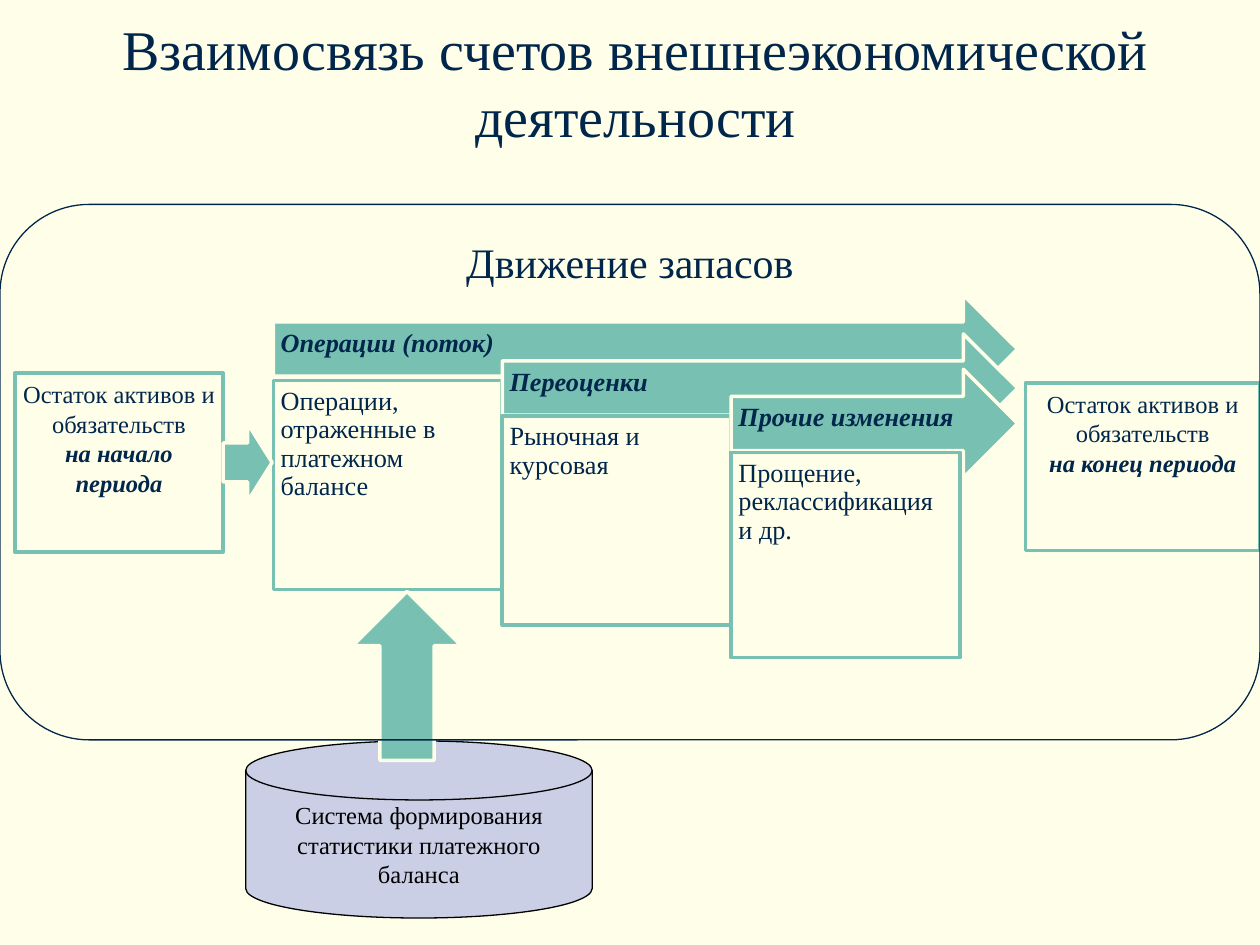
from lxml import etree
from pptx import Presentation
from pptx.dml.color import RGBColor
from pptx.enum.shapes import MSO_SHAPE as SHAPE
from pptx.enum.text import MSO_ANCHOR as ANCHOR, MSO_AUTO_SIZE as AUTO, PP_ALIGN as ALIGN
from pptx.oxml import parse_xml
from pptx.util import Pt

CREAM = RGBColor(0xFF, 0xFF, 0xE9)
TEAL = RGBColor(0x78, 0xC0, 0xB2)
NAVY = RGBColor(0x00, 0x26, 0x4C)
LILAC = RGBColor(0xCA, 0xCF, 0xE5)
BLACK = RGBColor(0, 0, 0)
FACE = "Times New Roman"
NS = "http://schemas.openxmlformats.org/drawingml/2006/main"

PLAIN = {"bold": False, "italic": False}
STRONG = {"bold": True, "italic": True}

# heading, body text, arrow top, body top, body height
STAGES = [
    ("Операции (поток)", "Операции, отраженные в платежном балансе", 168.5, 217.4, 119.5),
    ("Переоценки", "Рыночная и курсовая", 190.8, 237.6, 119.5),
    ("Прочие изменения", "Прощение, реклассификация и др.", 211, 258.5, 117.4),
]


def put(target, values):
    for name, value in values.items():
        setattr(target, name, value)


def draw(slide, kind, box, fill, line, width):
    shape = slide.shapes.add_shape(kind, *map(Pt, box))
    shape.shadow.inherit = False
    if fill is None:
        shape.fill.background()
    else:
        shape.fill.solid()
        shape.fill.fore_color.rgb = fill
    shape.line.color.rgb = line
    shape.line.width = Pt(width)
    return shape


def write(shape, rows, size, color=NAVY, align=ALIGN.CENTER, anchor=ANCHOR.TOP,
          pads=(3.6, 3.6, 3.6, 3.6), lead=1.0, wrap=True):
    """Fill a shape with rows of (text, font style); pads run left, top, right, bottom."""
    frame = shape.text_frame
    sides = ("margin_left", "margin_top", "margin_right", "margin_bottom")
    put(frame, dict(zip(sides, map(Pt, pads))))
    put(frame, {"auto_size": AUTO.NONE, "word_wrap": wrap, "vertical_anchor": anchor})
    for i, (text, style) in enumerate(rows):
        para = frame.add_paragraph() if i else frame.paragraphs[0]
        put(para, {"alignment": align, "line_spacing": lead})
        run = para.add_run()
        run.text = text
        put(run.font, {"name": FACE, "size": Pt(size), **style})
        run.font.color.rgb = color


def add_title(slide, box, text):
    title = slide.shapes.title
    put(title, dict(zip(("left", "top", "width", "height"), map(Pt, box))))
    write(title, [(text, PLAIN)], 32, anchor=ANCHOR.BOTTOM, pads=(7.2, 3.6, 7.2, 3.6))
    props = title.text_frame.paragraphs[0].runs[0].font.fill._xPr
    glow = parse_xml(
        f'<a:effectLst xmlns:a="{NS}"><a:outerShdw blurRad="38100" dist="38100" dir="2700000">'
        '<a:srgbClr val="000000"><a:alpha val="43000"/></a:srgbClr>'
        '</a:outerShdw></a:effectLst>')
    props.find(f"{{{NS}}}solidFill").addnext(glow)


def add_stages(slide, left, right, step):
    """Overlapping arrows that share a right end, each with its body below."""
    for i, (head, text, top, low, height) in enumerate(STAGES):
        x = left + i * step
        arrow = draw(slide, SHAPE.RIGHT_ARROW, (x, top, right - x, 62), TEAL, CREAM, 2)
        write(arrow, [(head, STRONG)], 15, align=ALIGN.LEFT, anchor=ANCHOR.MIDDLE,
              pads=(4.2, 4.2, 16, 10), lead=0.9)
        body = draw(slide, SHAPE.RECTANGLE, (x, low, step, height), CREAM, TEAL, 2)
        write(body, [(text, PLAIN)], 15, align=ALIGN.LEFT,
              pads=(4.2, 4.2, 4.2, 4.2), lead=0.9)


def add_stock(slide, box, moment):
    stock = draw(slide, SHAPE.RECTANGLE, box, CREAM, TEAL, 2)
    write(stock, [("Остаток активов и", PLAIN), ("обязательств", PLAIN), (moment, STRONG)], 14)


def add_source(slide, box):
    disk = draw(slide, SHAPE.FLOWCHART_MAGNETIC_DISK, box, LILAC, BLACK, 0.75)
    write(disk, [("Система формирования статистики платежного баланса", PLAIN)], 14,
          color=BLACK, anchor=ANCHOR.MIDDLE, pads=(7.2, 0, 7.2, 0))


def add_frame(slide, box):
    frame = draw(slide, SHAPE.ROUNDED_RECTANGLE, box, None, NAVY, 0.75)
    write(frame, [("Движение запасов", PLAIN)], 24, pads=(7.2, 3.6, 7.2, 3.6), wrap=False)


def main():
    deck = Presentation()
    put(deck, {"slide_width": Pt(720), "slide_height": Pt(540)})
    slide = deck.slides.add_slide(deck.slide_layouts[5])
    slide.background.fill.solid()
    slide.background.fill.fore_color.rgb = CREAM

    add_stages(slide, 156.2, 581.5, 130.8)
    add_title(slide, (20.2, 15.1, 686.2, 73.4),
              "Взаимосвязь счетов внешнеэкономической деятельности")
    add_stock(slide, (8.5, 213.2, 119, 102.2), "на начало периода")
    add_stock(slide, (586, 218.8, 134, 95.8), "на конец периода")
    add_source(slide, (140.4, 423.4, 198, 101.2))
    draw(slide, SHAPE.UP_ARROW, (201.6, 338, 62, 96.5), TEAL, CREAM, 2)
    add_frame(slide, (0, 116.8, 720, 306))
    draw(slide, SHAPE.RIGHT_ARROW, (127.5, 242, 28, 44.6), TEAL, CREAM, 2)
    deck.save("out.pptx")


if __name__ == "__main__":
    main()
